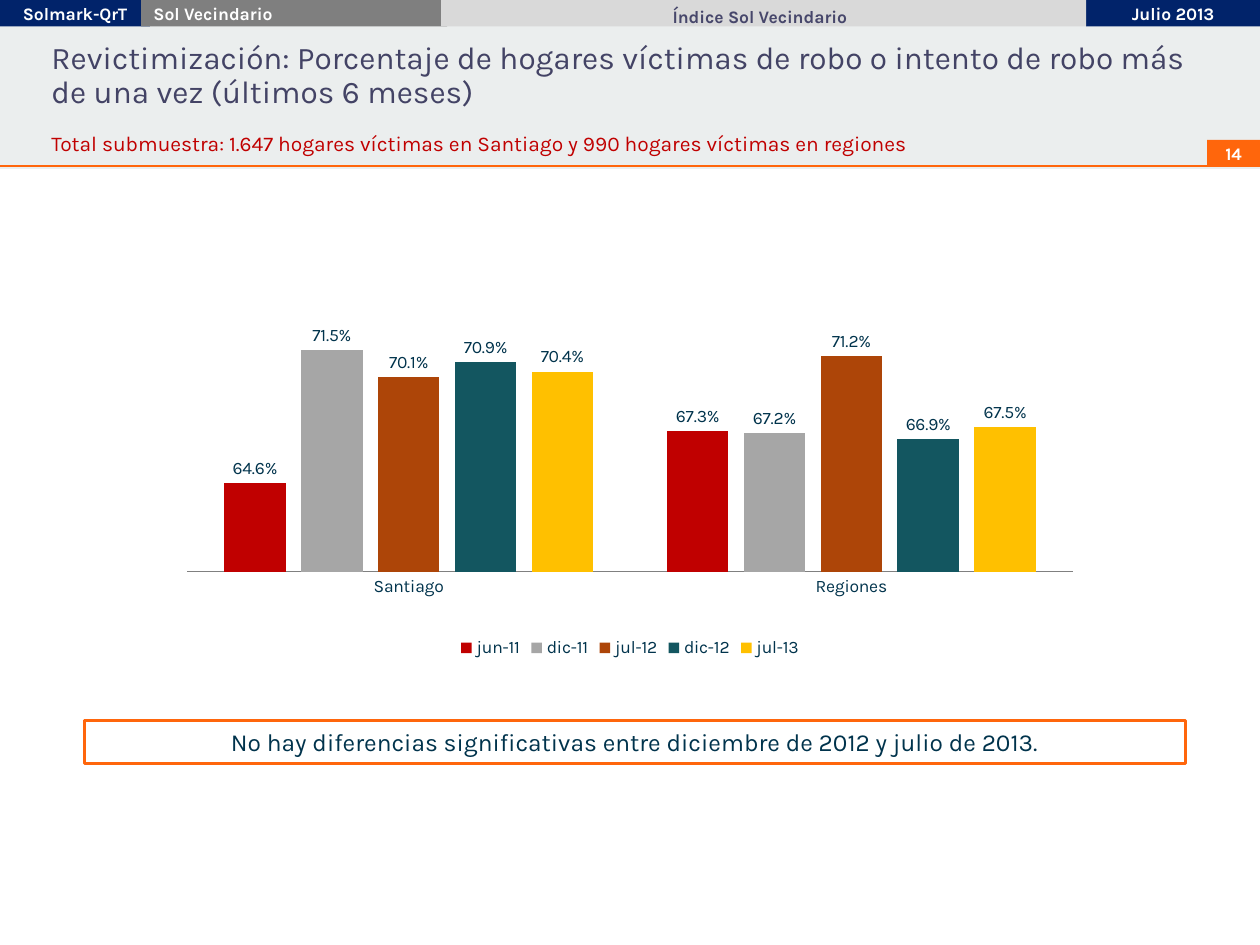
from dataclasses import dataclass

from lxml.etree import SubElement
from pptx import Presentation
from pptx.chart.data import CategoryChartData
from pptx.dml.color import RGBColor
from pptx.enum.chart import XL_CHART_TYPE, XL_LABEL_POSITION, XL_LEGEND_POSITION, XL_TICK_MARK
from pptx.enum.shapes import MSO_CONNECTOR, MSO_SHAPE
from pptx.enum.text import MSO_ANCHOR, PP_ALIGN
from pptx.oxml.ns import qn
from pptx.util import Inches, Pt


@dataclass(frozen=True)
class Theme:
    font: str = "Karla"
    white: str = "FFFFFF"
    band: str = "EBEEEE"
    orange: str = "FF660C"
    navy: str = "01236A"
    gray: str = "7F7F7F"
    silver: str = "D9D9D9"
    heading: str = "434365"
    index: str = "47476B"
    red: str = "C00000"
    ink: str = "00334C"
    axis: str = "808080"
    series: tuple = ("C00000", "A6A6A6", "AD4508", "135660", "FFC000")
    small: int = 10
    note: int = 12
    callout: int = 14
    title: int = 18


THEME = Theme()
PERCENT = "0.0%"
CATEGORIES = ("Santiago", "Regiones")
SERIES = {
    "jun-11": (0.646, 0.673),
    "dic-11": (0.715, 0.672),
    "jul-12": (0.701, 0.712),
    "dic-12": (0.709, 0.669),
    "jul-13": (0.704, 0.675),
}


def set_all(obj, values):
    for name, value in values.items():
        setattr(obj, name, value)


def set_font(font, size, color, bold=False):
    set_all(font, {"name": THEME.font, "size": Pt(size), "bold": bold})
    font.color.rgb = RGBColor.from_string(color)


def write(tf, text, size, color, bold=False, first=True, **layout):
    p = tf.paragraphs[0] if first else tf.add_paragraph()
    set_all(p, layout)
    r = p.add_run()
    r.text = text
    set_font(r.font, size, color, bold)


def add_box(s, at, fill, border=None):
    sp = s.shapes.add_shape(MSO_SHAPE.RECTANGLE, *map(Inches, at))
    sp.shadow.inherit = False
    sp.fill.solid()
    sp.fill.fore_color.rgb = RGBColor.from_string(fill)
    if border:
        sp.line.color.rgb = RGBColor.from_string(border)
        sp.line.width = Pt(2)
        SubElement(sp.line._get_or_add_ln(), qn("a:round"))
    else:
        sp.line.fill.background()
    set_all(sp.text_frame, {"word_wrap": bool(border), "vertical_anchor": MSO_ANCHOR.MIDDLE})
    return sp.text_frame


def add_text(s, at, **frame):
    tf = s.shapes.add_textbox(*map(Inches, at)).text_frame
    set_all(tf, {"word_wrap": True, **frame})
    return tf


def add_rule(s, x1, y1, x2, y2):
    sp = s.shapes.add_connector(MSO_CONNECTOR.STRAIGHT, *map(Inches, (x1, y1, x2, y2)))
    sp.line.color.rgb = RGBColor.from_string(THEME.orange)
    sp.line.width = Pt(1)
    SubElement(sp._element.spPr, qn("a:effectLst"))


def add_header(s):
    add_box(s, (0, 0, 10, 1.34), THEME.band)
    add_box(s, (9.58, 1.11, 0.42, 0.2), THEME.orange)
    add_rule(s, 0, 1.32, 10, 1.32)
    tabs = (
        (0, 1.19, THEME.navy, "Solmark-QrT", PP_ALIGN.CENTER),
        (1.12, 2.43, THEME.gray, "Sol Vecindario", PP_ALIGN.LEFT),
        (8.62, 1.38, THEME.navy, "Julio 2013", PP_ALIGN.CENTER),
    )
    for left, width, fill, text, align in tabs:
        tf = add_box(s, (left, 0, width, 0.21), fill)
        write(tf, text, THEME.small, THEME.white, True, alignment=align)
    add_box(s, (3.5, 0, 5.12, 0.21), THEME.silver)
    tf = add_text(s, (5.24, 0, 2.13, 0.27))
    write(tf, "Índice Sol Vecindario", THEME.small, THEME.index, True)


def add_title(s):
    tf = add_text(s, (0.31, 0.29, 9.25, 0.86))
    write(tf, "Revictimización: Porcentaje de hogares víctimas de robo o intento de robo "
              "más de una vez (últimos 6 meses)", THEME.title, THEME.heading, line_spacing=0.9)
    write(tf, "Total submuestra: 1.647 hogares víctimas en Santiago y 990 hogares víctimas "
              "en regiones", THEME.note, THEME.red, first=False, line_spacing=0.9,
          space_before=Pt(12.6))


def add_page_number(s):
    tf = add_text(s, (9.58, 1.13, 0.42, 0.21), vertical_anchor=MSO_ANCHOR.BOTTOM,
                  margin_left=Inches(0.04), margin_right=Inches(0.04),
                  margin_top=0, margin_bottom=Inches(0.04))
    write(tf, "14", THEME.small, THEME.white, True, alignment=PP_ALIGN.CENTER)


def place_plot(chart, x, y, w, h):
    area = chart._chartSpace.chart.plotArea
    for old in area.findall(qn("c:layout")):
        area.remove(old)
    layout = SubElement(area, qn("c:layout"))
    area.insert(0, layout)
    manual = SubElement(layout, qn("c:manualLayout"))
    values = {"layoutTarget": "inner", "xMode": "edge", "yMode": "edge",
              "x": x, "y": y, "w": w, "h": h}
    for name, value in values.items():
        SubElement(manual, qn(f"c:{name}")).set("val", str(value))


def add_column_chart(s, at):
    data = CategoryChartData(number_format=PERCENT)
    data.categories = CATEGORIES
    for name, values in SERIES.items():
        data.add_series(name, values)
    chart = s.shapes.add_chart(XL_CHART_TYPE.COLUMN_CLUSTERED, *map(Inches, at), data).chart
    set_font(chart.font, THEME.small, THEME.ink)
    set_all(chart, {"has_title": False, "has_legend": True})
    set_all(chart.legend, {"position": XL_LEGEND_POSITION.BOTTOM, "include_in_layout": False})
    set_all(chart.value_axis, {"minimum_scale": 0.6, "maximum_scale": 0.74,
                               "has_major_gridlines": False, "visible": False})
    chart.value_axis.tick_labels.number_format = PERCENT
    chart.category_axis.major_tick_mark = XL_TICK_MARK.NONE
    chart.category_axis.format.line.color.rgb = RGBColor.from_string(THEME.axis)
    plot = chart.plots[0]
    set_all(plot, {"gap_width": 120, "overlap": -25, "vary_by_categories": False})
    for series, color in zip(plot.series, THEME.series):
        series.format.fill.solid()
        series.format.fill.fore_color.rgb = RGBColor.from_string(color)
        labels = series.data_labels
        set_all(labels, {"show_value": True, "position": XL_LABEL_POSITION.OUTSIDE_END,
                         "number_format": PERCENT, "number_format_is_linked": False})
        set_font(labels.font, THEME.small, THEME.ink)
    place_plot(chart, 0.02, 0.05, 0.96, 0.71)


def add_callout(s):
    tf = add_box(s, (0.67, 5.72, 8.74, 0.34), THEME.white, THEME.orange)
    write(tf, "No hay diferencias significativas entre diciembre de 2012 y julio de 2013.",
          THEME.callout, THEME.ink, alignment=PP_ALIGN.CENTER)


def main():
    prs = Presentation()
    set_all(prs, {"slide_width": Inches(10), "slide_height": Inches(7.5)})
    s = prs.slides.add_slide(prs.slide_layouts[6])
    add_header(s)
    add_title(s)
    add_callout(s)
    add_page_number(s)
    add_column_chart(s, (1.34, 2.25, 7.32, 3.01))
    prs.save("out.pptx")


if __name__ == "__main__":
    main()
